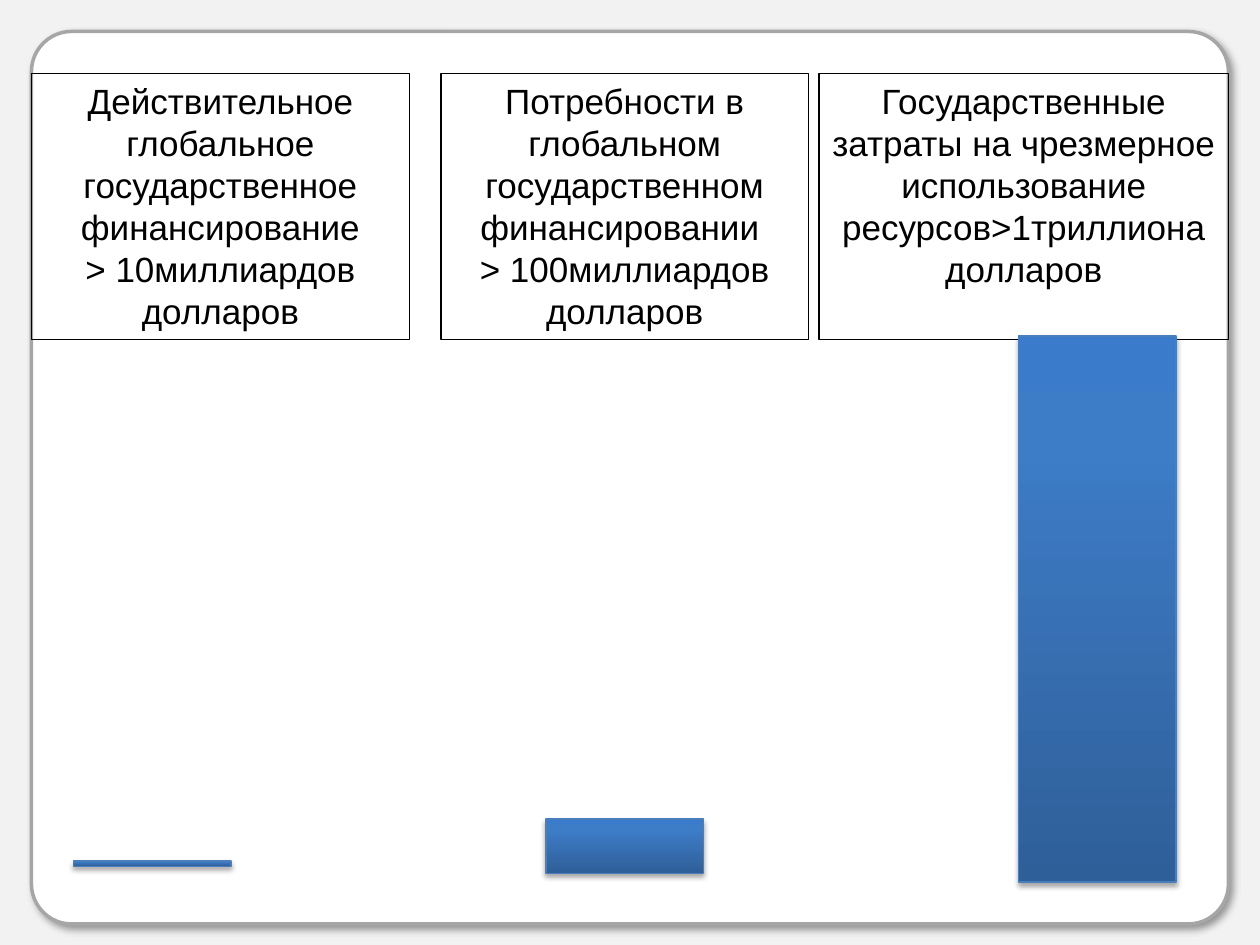
"""Build a slide that compares three levels of state funding with bars."""
from copy import deepcopy
from dataclasses import dataclass

from lxml import etree
from pptx import Presentation
from pptx.dml.color import RGBColor
from pptx.enum.shapes import MSO_SHAPE
from pptx.enum.text import MSO_AUTO_SIZE, PP_ALIGN
from pptx.oxml.ns import qn
from pptx.util import Pt

RECT = MSO_SHAPE.RECTANGLE
ROUND = MSO_SHAPE.ROUNDED_RECTANGLE
GROW = MSO_AUTO_SIZE.SHAPE_TO_FIT_TEXT
CENTER = PP_ALIGN.CENTER

HUES = {
    "back": "F2F2F2",
    "panel": "FFFFFF",
    "frame": "A6A6A6",
    "edge": "4B7EBC",
    "dark": "2F5F99",
    "mid": "3D7CC7",
    "light": "3A7CCB",
    "ink": "000000",
}
STOPS = ((0, "dark"), (0.8, "mid"), (1, "light"))
FONT = "Arial"
BOX_TOP, BOX_HIGH = 42, 152
BAR_LEFT, BAR_STEP, BAR_WIDE = 42, 270, 90


@dataclass
class Shade:
    alpha: int
    blur: float
    dist: float
    angle: int


@dataclass
class Group:
    left: float
    width: float
    lines: tuple[str, ...]
    top: float
    high: float


PANEL_SHADE = Shade(40, 4, 3, 45)
BAR_SHADE = Shade(35, 3.1, 1.8, 90)

GROUPS = (
    Group(18, 216, ("Действительное глобальное государственное финансирование",
                    "> 10миллиардов долларов"), 492, 3),
    Group(252, 210, ("Потребности в глобальном государственном финансировании ",
                     "> 100миллиардов долларов"), 468, 31),
    Group(468, 234, ("Государственные затраты на чрезмерное использование "
                     "ресурсов>1триллиона долларов",), 192, 312),
)


def tint(name: str) -> RGBColor:
    """Return a named colour."""
    return RGBColor.from_string(HUES[name])


def set_line(shape, name: str, width: float) -> None:
    """Give a shape a solid outline."""
    shape.line.color.rgb = tint(name)
    shape.line.width = Pt(width)


def add_shade(shape, shade: Shade) -> None:
    """Give a shape an outer shadow."""
    shape.shadow.inherit = False
    effects = shape._element.spPr.find(qn("a:effectLst"))
    outer = etree.SubElement(
        effects, qn("a:outerShdw"), blurRad=str(Pt(shade.blur)),
        dist=str(Pt(shade.dist)), dir=str(shade.angle * 60000),
        algn="ctr", rotWithShape="0")
    color = etree.SubElement(outer, qn("a:srgbClr"), val=HUES["ink"])
    etree.SubElement(color, qn("a:alpha"), val=str(shade.alpha * 1000))


def add_panel(slide) -> None:
    """Draw the rounded white panel."""
    panel = slide.shapes.add_shape(ROUND, Pt(18), Pt(18), Pt(684), Pt(510))
    panel.adjustments[0] = 0.045
    panel.fill.solid()
    panel.fill.fore_color.rgb = tint("panel")
    set_line(panel, "frame", 2)
    add_shade(panel, PANEL_SHADE)


def add_label(slide, group: Group) -> None:
    """Draw the framed text of a group."""
    box = slide.shapes.add_textbox(
        Pt(group.left), Pt(BOX_TOP), Pt(group.width), Pt(BOX_HIGH))
    set_line(box, "ink", 0.75)
    frame = box.text_frame
    frame.word_wrap = True
    frame.auto_size = GROW
    frame.text = "\n".join(group.lines)
    for para in frame.paragraphs:
        para.alignment = CENTER
        for run in para.runs:
            run.font.name = FONT
            run.font.size = Pt(20)
            run.font.color.rgb = tint("ink")


def add_bar(slide, index: int, group: Group) -> None:
    """Draw the shaded bar of a group."""
    left = BAR_LEFT + index * BAR_STEP
    if index == 1:
        left = 312
    bar = slide.shapes.add_shape(
        RECT, Pt(left), Pt(group.top), Pt(BAR_WIDE), Pt(group.high))
    bar.fill.gradient()
    bar.fill.gradient_angle = 90
    stops = bar._element.spPr.find(qn("a:gradFill")).find(qn("a:gsLst"))
    stops.append(deepcopy(stops[-1]))
    for stop, (place, name) in zip(bar.fill.gradient_stops, STOPS):
        stop.position = place
        stop.color.rgb = tint(name)
    set_line(bar, "edge", 0.75)
    add_shade(bar, BAR_SHADE)


def main() -> None:
    """Build and save the slide."""
    deck = Presentation()
    deck.slide_width, deck.slide_height = Pt(720), Pt(540)
    slide = deck.slides.add_slide(deck.slide_layouts[6])
    slide.background.fill.solid()
    slide.background.fill.fore_color.rgb = tint("back")
    add_panel(slide)
    for group in GROUPS:
        add_label(slide, group)
    for index, group in enumerate(GROUPS):
        add_bar(slide, index, group)
    deck.save("out.pptx")


if __name__ == "__main__":
    main()
